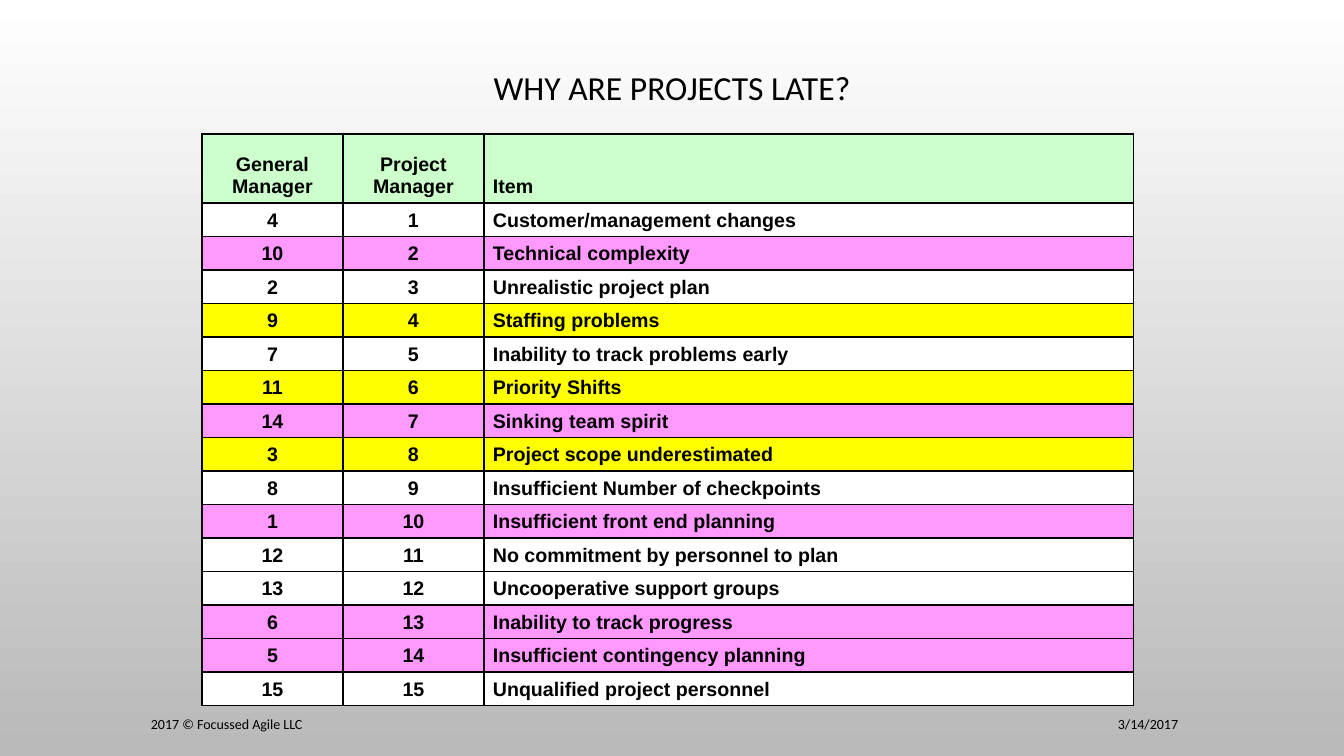
from pptx import Presentation
from pptx.dml.color import RGBColor
from pptx.enum.text import MSO_ANCHOR, PP_ALIGN
from pptx.util import Emu, Pt

LEFT, MID, RIGHT = PP_ALIGN.LEFT, PP_ALIGN.CENTER, PP_ALIGN.RIGHT
CENTRE, BASE = MSO_ANCHOR.MIDDLE, MSO_ANCHOR.BOTTOM

BLACK = RGBColor(0x00, 0x00, 0x00)
WHITE = RGBColor(0xFF, 0xFF, 0xFF)
GREY = RGBColor(0xB9, 0xB9, 0xB9)
GREEN = RGBColor(0xCC, 0xFF, 0xCC)
PINK = RGBColor(0xFF, 0x99, 0xFF)
YELLOW = RGBColor(0xFF, 0xFF, 0x00)


def px(n):
    """Turn pixels, 100.8 to the inch, into EMU."""
    return Emu(round(n * 914400 / 100.8))


def write(frame, text, size=10, font="Calibri", bold=False, align=LEFT, space=1.0):
    frame.word_wrap = True
    para = frame.paragraphs[0]
    para.alignment = align
    para.line_spacing = space
    run = para.add_run()
    run.text = text
    run.font.size = Pt(size)
    run.font.name = font
    run.font.bold = bold
    run.font.color.rgb = BLACK


deck = Presentation()
deck.slide_width, deck.slide_height = px(1344), px(756)
slide = deck.slides.add_slide(deck.slide_layouts[6])

# Background fades from white at the top to grey
back = slide.background.fill
back.gradient()
back.gradient_angle = 270
for stop, color in zip(back.gradient_stops, (WHITE, GREY)):
    stop.color.rgb = color

# Title and footer
labels = [
    ("WHY ARE PROJECTS LATE?", (101, 2, 1142, 176), dict(size=24, align=MID, space=0.9)),
    ("3/14/2017", (886, 704, 302, 40), dict(align=RIGHT)),
    ("2017 © Focussed Agile LLC", (141, 704, 736, 40), {}),
]
for text, place, style in labels:
    frame = slide.shapes.add_textbox(*map(px, place)).text_frame
    frame.vertical_anchor = CENTRE
    write(frame, text, **style)

# Ranking: general manager, project manager, item, row colour
ranks = [
    ("General Manager", "Project Manager", "Item", GREEN),
    (4, 1, "Customer/management changes", WHITE),
    (10, 2, "Technical complexity", PINK),
    (2, 3, "Unrealistic project plan", WHITE),
    (9, 4, "Staffing problems", YELLOW),
    (7, 5, "Inability to track problems early", WHITE),
    (11, 6, "Priority Shifts", YELLOW),
    (14, 7, "Sinking team spirit", PINK),
    (3, 8, "Project scope underestimated", YELLOW),
    (8, 9, "Insufficient Number of checkpoints", WHITE),
    (1, 10, "Insufficient front end planning", PINK),
    (12, 11, "No commitment by personnel to plan", WHITE),
    (13, 12, "Uncooperative support groups", WHITE),
    (6, 13, "Inability to track progress", PINK),
    (5, 14, "Insufficient contingency planning", PINK),
    (15, 15, "Unqualified project personnel", WHITE),
]
WIDTHS = (141, 141, 650)
HIGH, HEAD = 570, 69
body = (HIGH - HEAD) / (len(ranks) - 1)

table = slide.shapes.add_table(
    len(ranks), len(WIDTHS), px(202), px(134), px(sum(WIDTHS)), px(HIGH)
).table
table.first_row = table.horz_banding = False
for col, width in zip(table.columns, WIDTHS):
    col.width = px(width)

for r, (*values, color) in enumerate(ranks):
    table.rows[r].height = px(body if r else HEAD)
    for c, value in enumerate(values):
        cell = table.cell(r, c)
        cell.fill.solid()
        cell.fill.fore_color.rgb = color
        cell.vertical_anchor = BASE
        cell.margin_left = cell.margin_right = px(9)
        cell.margin_top = cell.margin_bottom = px(5)
        write(cell.text_frame, str(value), size=14, font="Arial", bold=True,
              align=LEFT if c == 2 else MID)

# Drop the table style, whose white borders would show between rows
props = table._tbl.tblPr
for style in list(props):
    props.remove(style)

deck.save("out.pptx")
